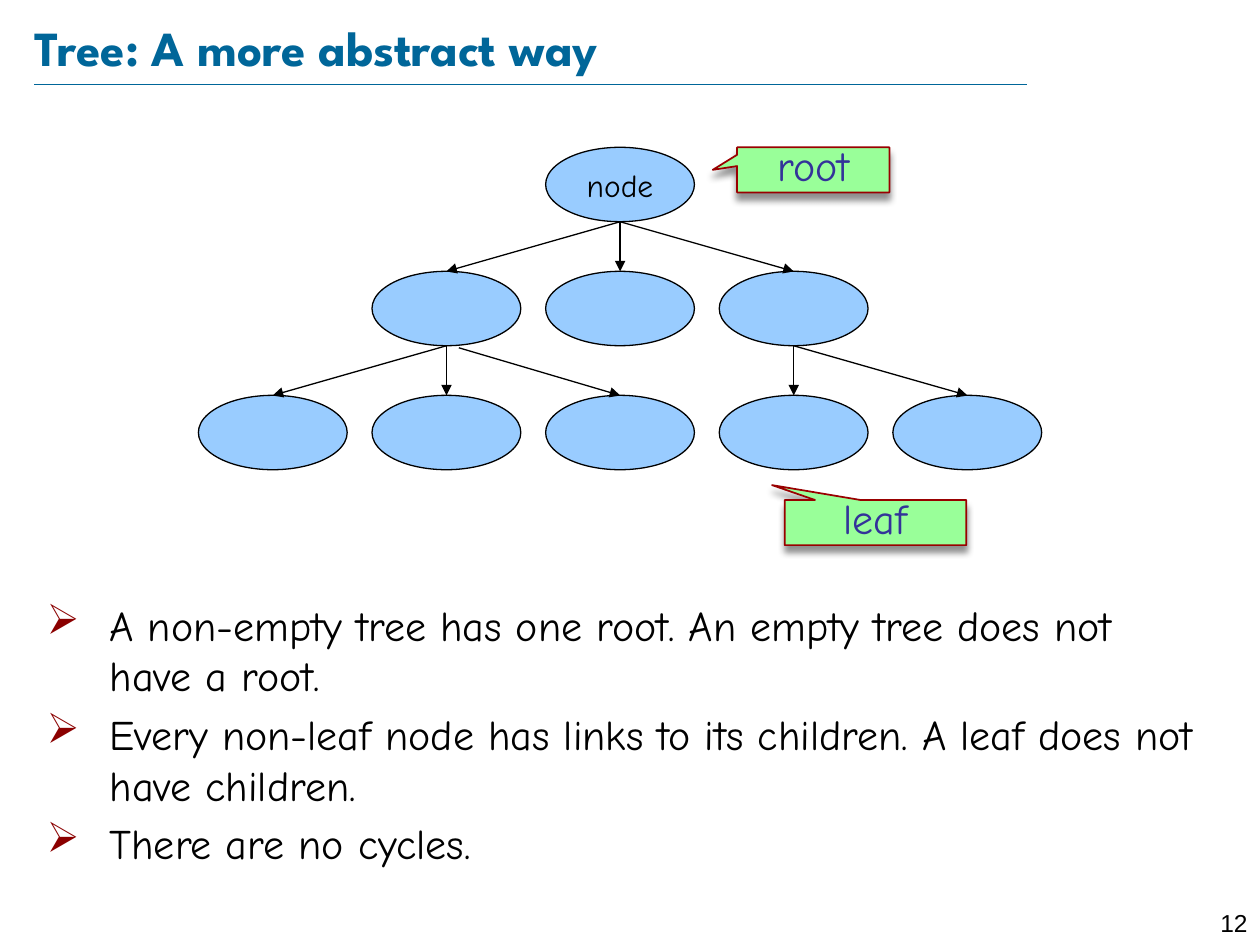
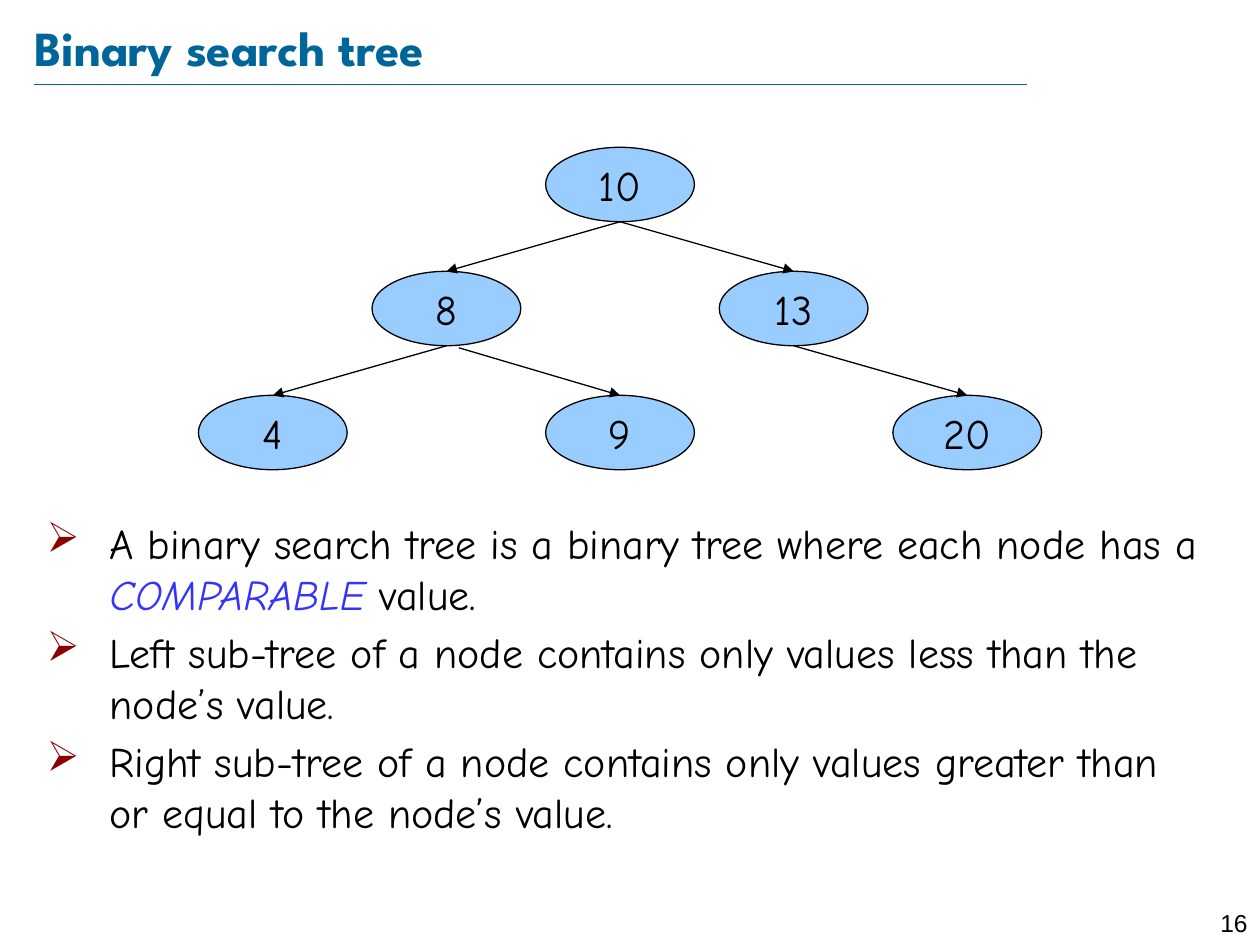
from dataclasses import dataclass

from lxml.etree import SubElement
from pptx import Presentation
from pptx.dml.color import RGBColor as Rgb
from pptx.enum.shapes import MSO_CONNECTOR as Link, MSO_SHAPE as Kind
from pptx.enum.text import MSO_ANCHOR as Anchor, MSO_AUTO_SIZE as Fit, PP_ALIGN as Align
from pptx.oxml.ns import qn
from pptx.util import Cm, Pt


@dataclass(frozen=True)
class Theme:
    # Colours
    title: str = "006699"
    ink: str = "000000"
    node: str = "99CCFF"
    tag: str = "99FF99"
    edge: str = "990000"
    label: str = "333399"
    mark: str = "8B0000"
    stress: str = "3333FF"
    # Fonts
    head: str = "League Spartan"
    hand: str = "Comic Neue"
    plain: str = "Arial"
    # Type sizes in points
    big: int = 28
    body: int = 24
    small: int = 18
    page: int = 14


THEME = Theme()
LEFT = 0.69

# Node grid in centimetres: first corner, steps and node size
GRID_X, GRID_Y = 4, 2.97
STEP_X, STEP_Y = 3.5, 2.5
NODE_W, NODE_H = 3, 1.5


# Shared helpers
def style(run, size, color, face=THEME.hand, bold=False, slant=False):
    font = run.font
    font.name, font.size = face, Pt(size)
    font.bold, font.italic = bold, slant
    font.color.rgb = Rgb.from_string(color)


def write(shape, text, size, color, align=Align.CENTER, **look):
    frame = shape.text_frame
    frame.text = text
    para = frame.paragraphs[0]
    para.alignment = align
    for run in para.runs:
        style(run, size, color, **look)
    return frame


def pad(frame, side, end):
    frame.margin_left = frame.margin_right = Cm(side)
    frame.margin_top = frame.margin_bottom = Cm(end)


def add_box(slide, kind, box, fill, line, width):
    shape = slide.shapes.add_shape(kind, *map(Cm, box))
    shape.shadow.inherit = False
    shape.fill.solid()
    shape.fill.fore_color.rgb = Rgb.from_string(fill)
    shape.line.color.rgb = Rgb.from_string(line)
    shape.line.width = Pt(width)
    return shape


def add_line(slide, start, end, color, width):
    line = slide.shapes.add_connector(Link.STRAIGHT, *map(Cm, (*start, *end)))
    line.line.color.rgb = Rgb.from_string(color)
    line.line.width = Pt(width)
    SubElement(line._element.spPr, qn("a:effectLst"))
    return line


# Slide frame: title, rule and page number
def add_page(deck, title, number):
    slide = deck.slides.add_slide(deck.slide_layouts[5])
    head = slide.shapes.title
    head.left, head.top, head.width, head.height = map(Cm, (LEFT, 0.33, 22.07, 1.22))
    frame = write(head, title, THEME.big, THEME.title, Align.LEFT,
                  face=THEME.head, bold=True)
    frame.auto_size = Fit.NONE
    frame.vertical_anchor = Anchor.MIDDLE
    pad(frame, 0, 0)
    add_line(slide, (LEFT, 1.7), (20.7, 1.7), THEME.title, 0.25)
    page = slide.shapes.add_textbox(*map(Cm, (24, 18.19, 1.4, 0.61)))
    frame = write(page, str(number), THEME.page, THEME.ink, Align.RIGHT,
                  face=THEME.plain)
    frame.word_wrap = True
    return slide


# Tree: nodes keyed by (row, column), edges from parent to child
def add_node(slide, row, col, text, size):
    box = (GRID_X + col * STEP_X, GRID_Y + row * STEP_Y, NODE_W, NODE_H)
    node = add_box(slide, Kind.OVAL, box, THEME.node, THEME.ink, 0.75)
    if text:
        frame = write(node, text, size, THEME.ink)
        frame.word_wrap = False
        frame.vertical_anchor = Anchor.MIDDLE
    return node


def add_edge(slide, row, col, child, shift):
    start = (GRID_X + col * STEP_X + NODE_W / 2 + shift,
             GRID_Y + row * STEP_Y + NODE_H + shift / 6)
    line = add_line(slide, start, start, THEME.ink, 0.75)
    line.end_connect(child, 0)
    SubElement(line._element.spPr.find(qn("a:ln")), qn("a:tailEnd"), type="triangle")


def add_tree(slide, labels, edges, size):
    nodes = {spot: add_node(slide, *spot, text, size) for spot, text in labels.items()}
    for parent, child in edges:
        # The right branch of the left parent starts a little aside
        shift = 0.25 if (parent, child) == ((1, 1), (2, 2)) else 0
        add_edge(slide, *parent, nodes[child], shift)


# Callout with a soft shadow below
def add_tag(slide, text, box, tip):
    tag = add_box(slide, Kind.RECTANGULAR_CALLOUT, box, THEME.tag, THEME.edge, 1)
    tag.adjustments[0], tag.adjustments[1] = tip
    cast = SubElement(tag._element.spPr.find(qn("a:effectLst")), qn("a:outerShdw"),
                      blurRad=str(Pt(4)), dist=str(Pt(4)), dir="5400000",
                      rotWithShape="0")
    tint = SubElement(cast, qn("a:srgbClr"), val=THEME.ink)
    SubElement(tint, qn("a:alpha"), val="43000")
    frame = write(tag, text, THEME.body, THEME.label)
    frame.vertical_anchor = Anchor.MIDDLE
    frame.paragraphs[0].line_spacing = 0.8
    pad(frame, 0, 0.13)


# Bullet list; words between asterisks are stressed
def add_list(slide, top, height, items):
    box = slide.shapes.add_textbox(*map(Cm, (LEFT, top, 23.88, height)))
    frame = box.text_frame
    frame.word_wrap = True
    for i, item in enumerate(items):
        para = frame.add_paragraph() if i else frame.paragraphs[0]
        props = para._p.get_or_add_pPr()
        props.set("marL", str(Cm(1.27)))
        props.set("indent", str(Cm(-1.27)))
        tint = SubElement(props, qn("a:buClr"))
        SubElement(tint, qn("a:srgbClr"), val=THEME.mark)
        SubElement(props, qn("a:buChar"), char="➢")
        if i:
            para.space_before = Pt(THEME.body * 0.2)
        for j, part in enumerate(item.split("*")):
            run = para.add_run()
            run.text = part
            stress = j % 2 == 1
            style(run, THEME.body, THEME.stress if stress else THEME.ink, slant=stress)


def main():
    deck = Presentation()
    deck.slide_width, deck.slide_height = Cm(25.4), Cm(19.05)

    # Abstract tree
    slide = add_page(deck, "Tree: A more abstract way", 12)
    labels = {(0, 2): "node"}
    labels.update({(1, col): "" for col in (1, 2, 3)})
    labels.update({(2, col): "" for col in range(5)})
    edges = [((0, 2), (1, col)) for col in (1, 2, 3)]
    edges += [((1, 1), (2, col)) for col in (0, 1, 2)]
    edges += [((1, 3), (2, col)) for col in (3, 4)]
    add_tree(slide, labels, edges, THEME.small)
    add_tag(slide, "root", (14.86, 2.97, 3.07, 0.91), (-0.66, 0))
    add_tag(slide, "leaf", (15.82, 10.08, 3.66, 0.91), (-0.57, -0.83))
    add_list(slide, 11.96, 6.17, [
        "A non-empty tree has one root. An empty tree does not have a root.",
        "Every non-leaf node has links to its children. A leaf does not have children.",
        "There are no cycles.",
    ])

    # Binary search tree
    slide = add_page(deck, "Binary search tree", 16)
    labels = {(0, 2): "10", (1, 1): "8", (1, 3): "13",
              (2, 0): "4", (2, 2): "9", (2, 4): "20"}
    edges = [((0, 2), (1, 1)), ((0, 2), (1, 3)), ((1, 1), (2, 0)),
             ((1, 1), (2, 2)), ((1, 3), (2, 4))]
    add_tree(slide, labels, edges, THEME.body)
    add_list(slide, 10.31, 7.32, [
        "A binary search tree is a binary tree where each node has a *COMPARABLE* value.",
        "Left sub-tree of a node contains only values less than the node’s value.",
        "Right sub-tree of a node contains only values greater than or equal to "
        "the node’s value.",
    ])

    deck.save("out.pptx")


if __name__ == "__main__":
    main()
